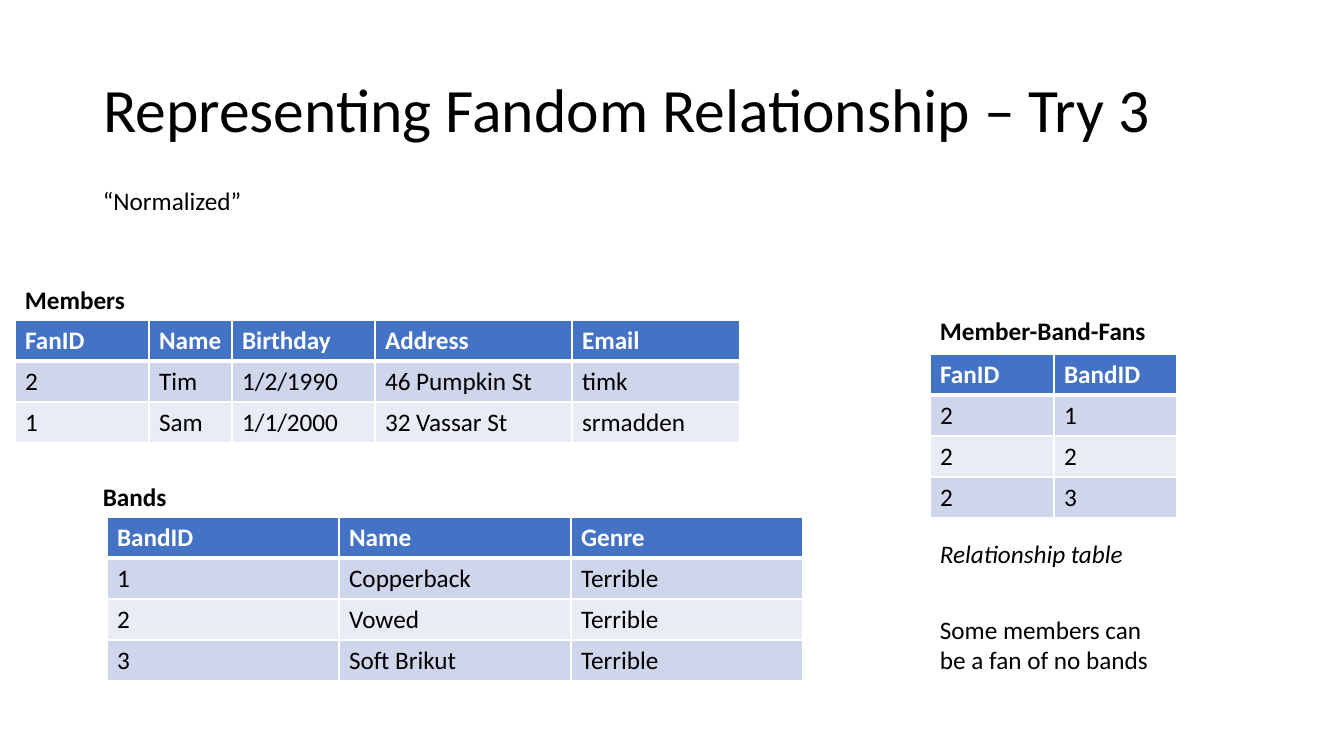
from lxml import etree
from pptx import Presentation
from pptx.dml.color import RGBColor
from pptx.enum.text import MSO_ANCHOR, MSO_AUTO_SIZE, PP_ALIGN
from pptx.oxml.ns import qn
from pptx.util import Pt

LEFT, MIDDLE = PP_ALIGN.LEFT, MSO_ANCHOR.MIDDLE
NO_FIT, GROW = MSO_AUTO_SIZE.NONE, MSO_AUTO_SIZE.SHAPE_TO_FIT_TEXT
FONT = "Calibri"
COLORS = {"text": "000000", "white": "FFFFFF", "header": "4472C4",
          "odd": "CFD5EA", "even": "E9EBF5"}

TITLE = "Representing Fandom Relationship – Try 3"
TITLE_BOX = (93, 40, 1159, 146)

# left, top, column widths, rows
TABLES = [
    (15, 320, (134, 83, 143, 197, 168), [
        ("FanID", "Name", "Birthday", "Address", "Email"),
        ("2", "Tim", "1/2/1990", "46 Pumpkin St", "timk"),
        ("1", "Sam", "1/1/2000", "32 Vassar St", "srmadden")]),
    (107, 517, (232, 232, 232), [
        ("BandID", "Name", "Genre"),
        ("1", "Copperback", "Terrible"),
        ("2", "Vowed", "Terrible"),
        ("3", "Soft Brikut", "Terrible")]),
    (930, 354, (124, 123), [
        ("FanID", "BandID"),
        ("2", "1"),
        ("2", "2"),
        ("2", "3")]),
]
ROW_H = 41

# text, box, format
LABELS = [
    ("Members", (15, 279, 569, 40), {"bold": True}),
    ("Bands", (93, 476, 569, 40), {"bold": True}),
    ("Member-Band-Fans", (930, 310, 400, 40), {"bold": True}),
    ("Relationship table", (930, 533, 348, 40), {"italic": True}),
    ("Some members can be a fan of no bands", (930, 609, 247, 72), {}),
    ("“Normalized”", (93, 180, 453, 40), {}),
]


def px(n):
    return round(n * 914400 / 100.8)


def rgb(name):
    return RGBColor.from_string(COLORS[name])


def write(tf, text, size=18, color="text", bold=False, italic=False, spacing=None):
    p = tf.paragraphs[0]
    p.alignment = LEFT
    p.line_spacing = spacing
    r = p.add_run()
    r.text = text
    r.font.name, r.font.size = FONT, Pt(size)
    r.font.bold, r.font.italic = bold, italic
    r.font.color.rgb = rgb(color)


def set_borders(cell, top, bottom):
    """Draw white cell edges; top and bottom are widths in points."""
    tc_pr = cell._tc.get_or_add_tcPr()
    edges = (("a:lnL", 1), ("a:lnR", 1), ("a:lnT", top), ("a:lnB", bottom))
    for i, (tag, width) in enumerate(edges):
        ln = etree.Element(qn(tag), w=str(Pt(width)))
        fill = etree.SubElement(ln, qn("a:solidFill"))
        etree.SubElement(fill, qn("a:srgbClr"), val=COLORS["white"])
        tc_pr.insert(i, ln)


def add_table(s, left, top, widths, rows):
    frame = s.shapes.add_table(len(rows), len(widths), px(left), px(top),
                               px(sum(widths)), px(ROW_H * len(rows)))
    table = frame.table
    for column, width in zip(table.columns, widths):
        column.width = px(width)
    for i, values in enumerate(rows):
        table.rows[i].height = px(ROW_H)
        header = i == 0
        fill = "header" if header else ("odd" if i % 2 else "even")
        for j, value in enumerate(values):
            cell = table.cell(i, j)
            cell.fill.solid()
            cell.fill.fore_color.rgb = rgb(fill)
            set_borders(cell, top=3 if i == 1 else 1, bottom=3 if header else 1)
            write(cell.text_frame, value, bold=header,
                  color="white" if header else "text")


def add_label(s, text, box, style):
    tf = s.shapes.add_textbox(*map(px, box)).text_frame
    tf.word_wrap = True
    tf.auto_size = GROW
    write(tf, text, **style)


def main():
    prs = Presentation()
    prs.slide_width, prs.slide_height = px(1344), px(756)
    s = prs.slides.add_slide(prs.slide_layouts[5])

    title = s.shapes.title
    title.left, title.top, title.width, title.height = map(px, TITLE_BOX)
    title.text_frame.vertical_anchor = MIDDLE
    title.text_frame.auto_size = NO_FIT
    write(title.text_frame, TITLE, size=44, spacing=0.9)

    for table in TABLES:
        add_table(s, *table)
    for label in LABELS:
        add_label(s, *label)
    prs.save("out.pptx")


if __name__ == "__main__":
    main()
